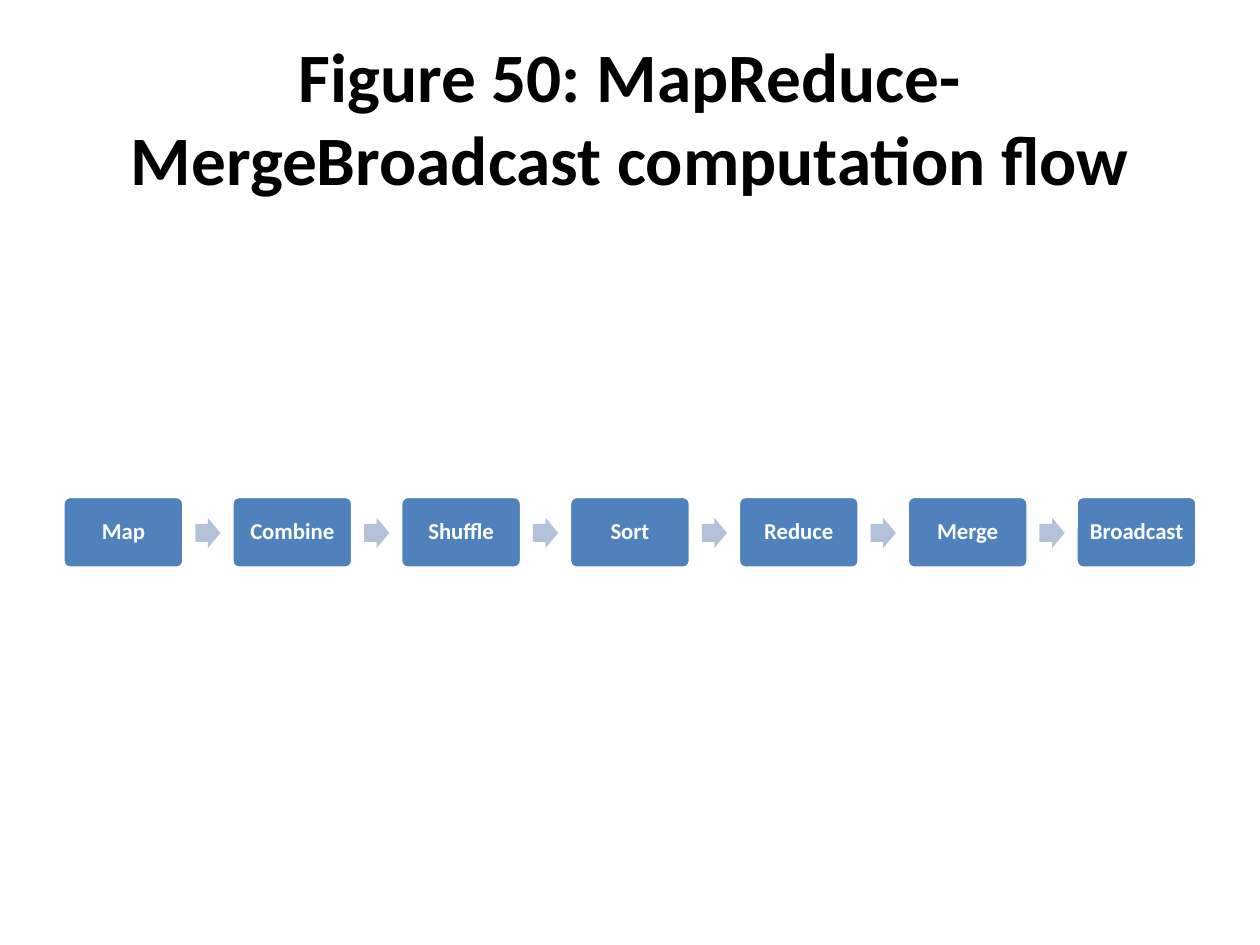
import pptx
import pptx.dml.color
import pptx.enum.shapes
import pptx.enum.text
import pptx.util

Inches = pptx.util.Inches
Pt = pptx.util.Pt
Shapes = pptx.enum.shapes.MSO_SHAPE


def color(value):
    return pptx.dml.color.RGBColor.from_string(value)


class FlowSlide:
    """Hold the style and the current slide, and draw the flow elements."""

    font = "Calibri"
    box_fill = "4F81BD"
    arrow_fill = "B3C1DB"
    light = "FFFFFF"
    dark = "000000"

    def __init__(self, slide):
        self.slide = slide

    def label(self, shape, text, size, text_color, margin):
        frame = shape.text_frame
        frame.text = text
        frame.word_wrap = True
        frame.vertical_anchor = pptx.enum.text.MSO_ANCHOR.MIDDLE
        frame.margin_left = frame.margin_right = Inches(margin)
        frame.margin_top = frame.margin_bottom = Inches(0.05)
        paragraph = frame.paragraphs[0]
        paragraph.alignment = pptx.enum.text.PP_ALIGN.CENTER
        font = paragraph.runs[0].font
        font.name = self.font
        font.size = Pt(size)
        font.bold = True
        font.color.rgb = color(text_color)
        return paragraph

    def title(self, text, left, top, width, height):
        shape = self.slide.shapes.add_textbox(
            Inches(left), Inches(top), Inches(width), Inches(height))
        self.label(shape, text, 39.6, self.dark, 0.1)

    def shape(self, kind, left, top, width, height, fill, adjustments):
        shape = self.slide.shapes.add_shape(
            kind, Inches(left), Inches(top), Inches(width), Inches(height))
        shape.shadow.inherit = False
        shape.fill.solid()
        shape.fill.fore_color.rgb = color(fill)
        for index, value in enumerate(adjustments):
            shape.adjustments[index] = value
        return shape

    def step(self, text, left, top, width, height):
        shape = self.shape(Shapes.ROUNDED_RECTANGLE, left, top, width, height,
                           self.box_fill, [0.1])
        shape.line.color.rgb = color(self.light)
        shape.line.width = Pt(2)
        paragraph = self.label(shape, text, 13, self.light, 0.05)
        paragraph.line_spacing = 0.9

    def arrow(self, left, top, width, height):
        shape = self.shape(Shapes.RIGHT_ARROW, left, top, width, height,
                           self.arrow_fill, [0.6, 0.5])
        shape.line.fill.background()


def main():
    presentation = pptx.Presentation()
    presentation.slide_width = Inches(10)
    presentation.slide_height = Inches(7.5)
    flow = FlowSlide(presentation.slides.add_slide(presentation.slide_layouts[6]))
    flow.title("Figure 50: MapReduce-MergeBroadcast computation flow", 0.5, 0.3, 9, 1.25)

    steps = ["Map", "Combine", "Shuffle", "Sort", "Reduce", "Merge", "Broadcast"]
    first_left, pitch, arrow_offset = 0.5, 1.34, 1.05
    for index, name in enumerate(steps):
        left = first_left + index * pitch
        flow.step(name, left, 3.94, 0.96, 0.57)
        if index < len(steps) - 1:
            flow.arrow(left + arrow_offset, 4.11, 0.2, 0.24)

    presentation.save("out.pptx")


if __name__ == "__main__":
    main()
